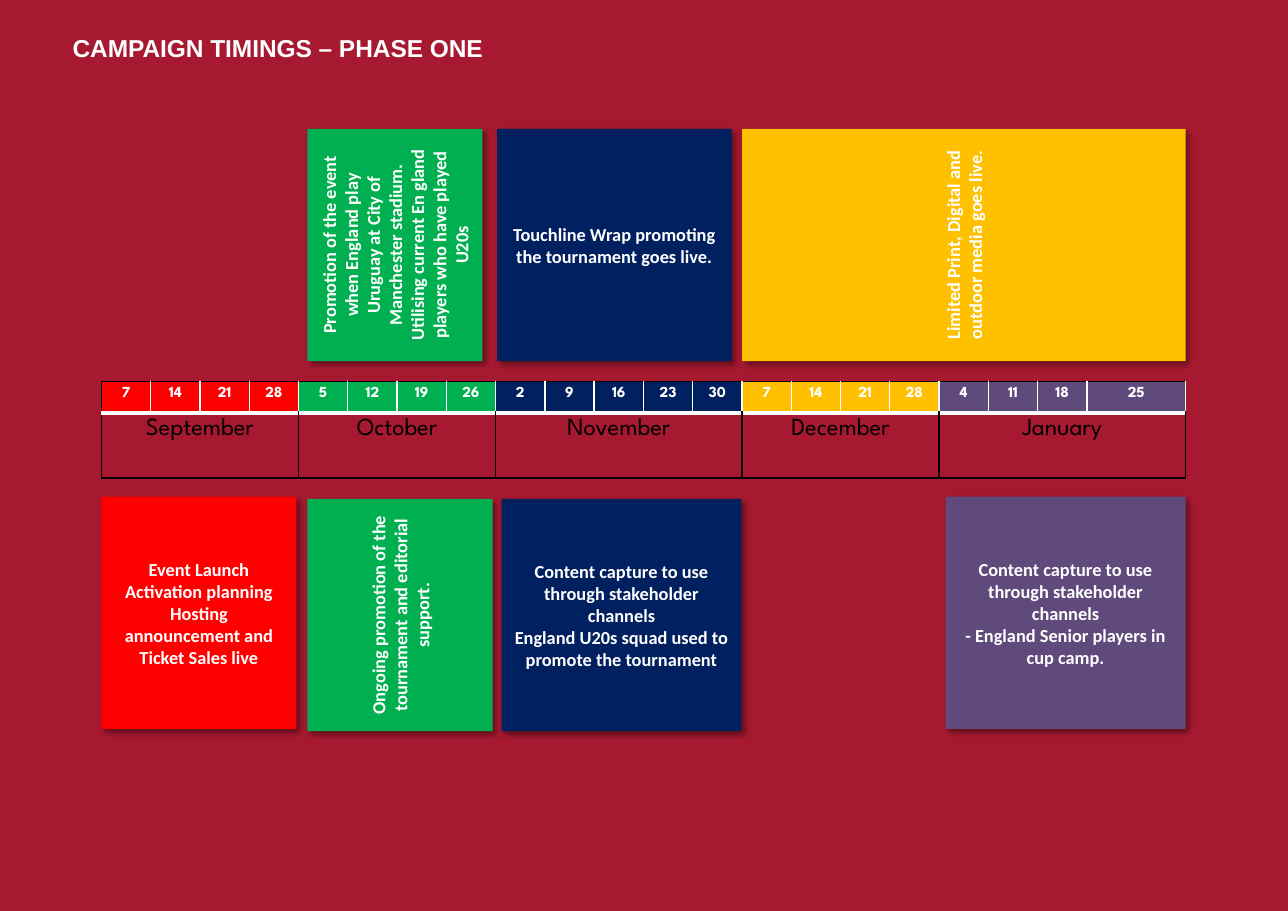
from dataclasses import dataclass

from lxml import etree
from pptx import Presentation
from pptx.dml.color import RGBColor
from pptx.enum.shapes import MSO_SHAPE
from pptx.enum.text import MSO_ANCHOR, PP_ALIGN
from pptx.oxml import parse_xml
from pptx.oxml.ns import nsdecls, qn
from pptx.slide import Slide
from pptx.table import _Cell
from pptx.text.text import TextFrame
from pptx.util import Emu, Inches, Pt

RECT = MSO_SHAPE.RECTANGLE
MIDDLE = MSO_ANCHOR.MIDDLE
LEFT, CENTER = PP_ALIGN.LEFT, PP_ALIGN.CENTER

SLIDE_W, SLIDE_H = Inches(11.69), Inches(8.27)
GRID_LEFT, GRID_W = Inches(0.92), Inches(9.84)
COL = GRID_W / 22
ROW = SLIDE_H / 100
BOX_ROWS = 25.5
UPPER, LOWER, LOWER_INSET = 14.15, 54.53, 54.78
TABLE_TOP, DAY_ROWS, MONTH_ROWS = 41.84, 3.5, 7.15


@dataclass(frozen=True)
class Theme:
    background: str = "A71930"
    white: str = "FFFFFF"
    black: str = "000000"
    red: str = "FF0000"
    green: str = "00B050"
    navy: str = "002060"
    gold: str = "FFC000"
    purple: str = "604A7B"
    title_font: str = "Arial"
    box_font: str = "Calibri"
    table_font: str = "League Spartan"
    title_size: int = 16
    month_size: int = 16
    box_size: int = 12
    day_size: int = 10


@dataclass(frozen=True)
class Month:
    name: str
    color: str
    days: tuple[int, ...]


@dataclass(frozen=True)
class Activity:
    col: float
    row: float
    cols: float
    color: str
    lines: tuple[str, ...]
    rotated: bool = False


T = Theme()

MONTHS = (
    Month("September", T.red, (7, 14, 21, 28)),
    Month("October", T.green, (5, 12, 19, 26)),
    Month("November", T.navy, (2, 9, 16, 23, 30)),
    Month("December", T.gold, (7, 14, 21, 28)),
    Month("January", T.purple, (4, 11, 18, 25)),
)

ACTIVITIES = (
    Activity(0, LOWER, 3.96, T.red, (
        "Event Launch",
        "Activation planning",
        "Hosting announcement and Ticket Sales live")),
    Activity(4.18, LOWER_INSET, 3.76, T.green, (
        "Ongoing promotion of the tournament and editorial support.",), True),
    Activity(8.12, LOWER_INSET, 4.87, T.navy, (
        "Content capture to use through stakeholder channels",
        "England U20s squad used to promote the tournament")),
    Activity(13, UPPER, 9, T.gold, (
        "Limited Print, Digital and outdoor media goes live.",), True),
    Activity(17.13, LOWER, 4.87, T.purple, (
        "Content capture to use through stakeholder channels",
        "- England Senior players in cup camp.")),
    Activity(4.18, UPPER, 3.55, T.green, (
        "Promotion of the event when England play Uruguay at City of Manchester stadium.",
        "Utilising current En gland players who have played U20s"), True),
    Activity(8.03, UPPER, 4.76, T.navy, (
        "Touchline Wrap promoting the tournament goes live.",)),
)


def rgb(color: str) -> RGBColor:
    return RGBColor.from_string(color)


def x(col: float) -> Emu:
    return Emu(round(GRID_LEFT + col * COL))


def w(cols: float) -> Emu:
    return Emu(round(cols * COL))


def h(rows: float) -> Emu:
    return Emu(round(rows * ROW))


def write(tf: TextFrame, *lines: str, font: str, size: int, color: str = T.white,
          bold: bool = True, align: PP_ALIGN = CENTER) -> None:
    for i, line in enumerate(lines):
        p = tf.paragraphs[0] if i == 0 else tf.add_paragraph()
        p.alignment = align
        r = p.add_run()
        r.text = line
        r.font.name = font
        r.font.size = Pt(size)
        r.font.bold = bold
        r.font.color.rgb = rgb(color)


def add_shadow(sp_pr: etree._Element) -> None:
    sp_pr.find(qn("a:effectLst")).append(parse_xml(
        f'<a:outerShdw {nsdecls("a")} blurRad="{Pt(4)}" dist="{Pt(3)}" dir="2700000" '
        'algn="tl" rotWithShape="0"><a:srgbClr val="000000"><a:alpha val="40000"/>'
        '</a:srgbClr></a:outerShdw>'))


def set_borders(cell: _Cell, left: str, right: str, top: str, bottom: str,
                bottom_width: int = 1) -> None:
    tc_pr = cell._tc.get_or_add_tcPr()
    sides = (("L", left, 1), ("R", right, 1), ("T", top, 1), ("B", bottom, bottom_width))
    for i, (side, color, width) in enumerate(sides):
        tc_pr.insert(i, parse_xml(
            f'<a:ln{side} {nsdecls("a")} w="{Pt(width)}"><a:solidFill>'
            f'<a:srgbClr val="{color}"/></a:solidFill></a:ln{side}>'))


def add_title(s: Slide, text: str) -> None:
    tf = s.shapes.add_textbox(x(-0.83), h(2.9), w(23.68), h(6.4)).text_frame
    tf.word_wrap = True
    tf.margin_left = tf.margin_right = Inches(0.11)
    tf.margin_top = tf.margin_bottom = Inches(0.06)
    write(tf, text, font=T.title_font, size=T.title_size, align=LEFT)


def add_calendar(s: Slide) -> None:
    count = sum(len(m.days) for m in MONTHS)
    table = s.shapes.add_table(2, count, x(0), h(TABLE_TOP), GRID_W,
                               h(DAY_ROWS + MONTH_ROWS)).table
    table.first_row = table.horz_banding = False
    table.rows[0].height, table.rows[1].height = h(DAY_ROWS), h(MONTH_ROWS)
    for i in range(count):
        table.columns[i].width = w(2 if i == count - 1 else 1)

    start = 0
    for month in MONTHS:
        for col, day in enumerate(month.days, start):
            cell = table.cell(0, col)
            cell.fill.solid()
            cell.fill.fore_color.rgb = rgb(month.color)
            set_borders(cell, T.white if col else T.black, T.white, T.black, T.white, 3)
            write(cell.text_frame, str(day), font=T.table_font, size=T.day_size)
            below = table.cell(1, col)
            below.fill.background()
            set_borders(below, T.black, T.black, T.white, T.black)
        end = start + len(month.days)
        label = table.cell(1, start)
        label.merge(table.cell(1, end - 1))
        write(label.text_frame, month.name, font=T.table_font, size=T.month_size,
              color=T.black, bold=False)
        start = end


def add_activity(s: Slide, a: Activity) -> None:
    sp = s.shapes.add_shape(RECT, x(a.col), h(a.row), w(a.cols), h(BOX_ROWS))
    sp.fill.solid()
    sp.fill.fore_color.rgb = rgb(a.color)
    sp.line.fill.background()
    sp.shadow.inherit = False
    add_shadow(sp.element.spPr)
    tf = sp.text_frame
    tf.word_wrap = True
    tf.vertical_anchor = MIDDLE
    if a.rotated:
        sp.element.txBody.bodyPr.set("vert", "vert270")
    write(tf, *a.lines, font=T.box_font, size=T.box_size)


def main() -> None:
    prs = Presentation()
    prs.slide_width, prs.slide_height = SLIDE_W, SLIDE_H
    s = prs.slides.add_slide(prs.slide_layouts[6])
    s.background.fill.solid()
    s.background.fill.fore_color.rgb = rgb(T.background)
    add_calendar(s)
    for activity in ACTIVITIES:
        add_activity(s, activity)
    add_title(s, "CAMPAIGN TIMINGS – PHASE ONE")
    prs.save("out.pptx")


if __name__ == "__main__":
    main()
